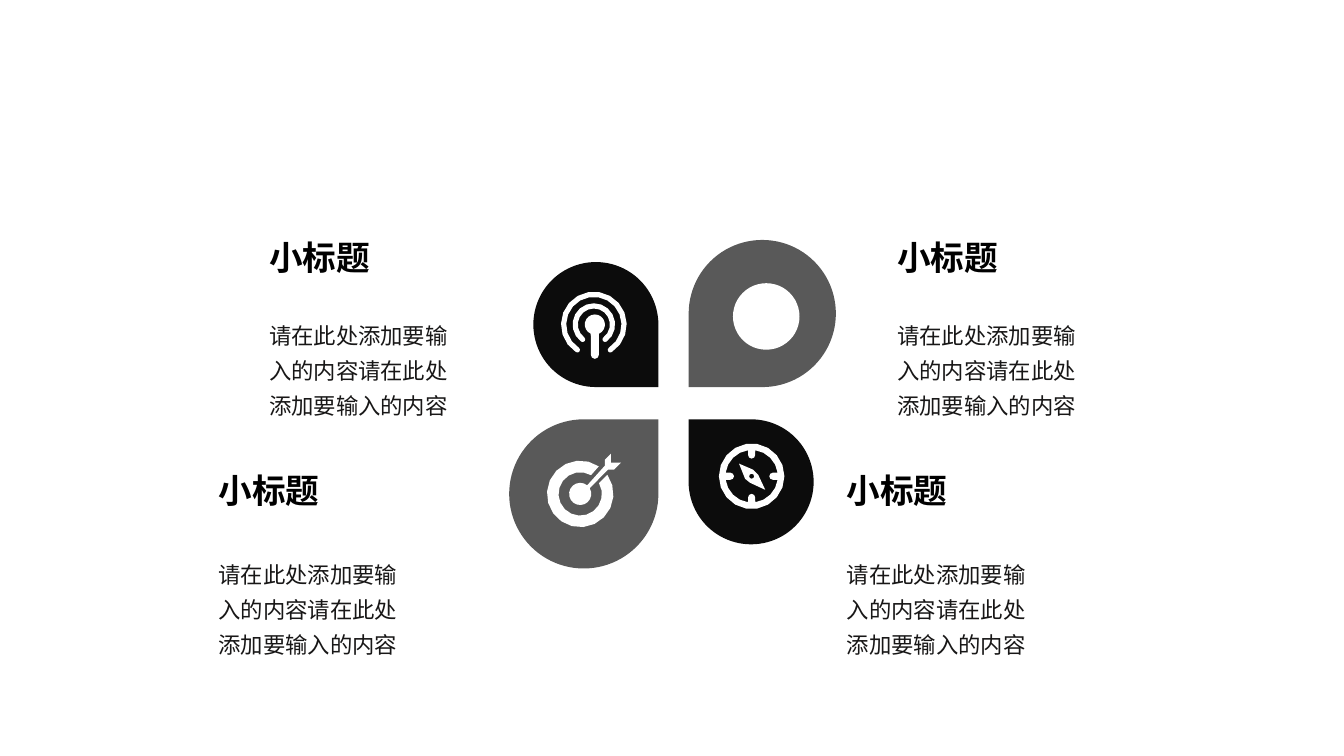
"""Builds a four-petal slide with an icon in each petal and four captions."""
from math import cos, radians, sin

from lxml import etree
from pptx import Presentation
from pptx.dml.color import RGBColor
from pptx.enum.shapes import MSO_SHAPE
from pptx.enum.text import MSO_AUTO_SIZE, PP_ALIGN
from pptx.oxml.ns import qn
from pptx.util import Inches, Pt

TEARDROP, OVAL = MSO_SHAPE.TEAR, MSO_SHAPE.OVAL
GROW, JUSTIFY = MSO_AUTO_SIZE.SHAPE_TO_FIT_TEXT, PP_ALIGN.JUSTIFY
COLORS = {"black": "0C0C0C", "gray": "595959", "white": "FFFFFF",
          "title": "000000", "body": "181717"}
FONT = "Noto Sans CJK SC"
LEFT, RIGHT, TOP, BOTTOM = 6.53, 6.83, 3.84, 4.16


def arc(cx, cy, r, start=0, end=360):
    step = 20 if r >= 0.1 else 45
    n = round(abs(end - start) / step)
    angles = [radians(start + (end - start) * i / n) for i in range(n + 1)]
    return [(cx + r * cos(a), cy + r * sin(a)) for a in angles]


def wave(cx, cy, r, start, end):
    half = 0.026
    tips = [(cx + r * cos(radians(a)), cy + r * sin(radians(a))) for a in (start, end)]
    return (arc(cx, cy, r + half, start, end) + arc(*tips[1], half, end, end + 180)
            + arc(cx, cy, r - half, end, start) + arc(*tips[0], half, start + 180, start + 360))


def compass():
    cx, cy = 7.455, 4.725
    dial = []
    for a in range(0, 360, 90):
        tick = radians(a + 90)
        dial += arc(cx, cy, 0.26, a + 8, a + 82)
        dial += arc(cx + 0.21 * cos(tick), cy + 0.21 * sin(tick), 0.035, a, a - 180)
    needle = [(7.33, 4.6), (7.47, 4.66), (7.52, 4.71), (7.59, 4.86), (7.44, 4.79), (7.39, 4.75)]
    return [arc(cx, cy, 0.325), dial, needle, arc(cx, cy, 0.025)]


def antenna():
    cx, cy = 5.89, 3.22
    mast = arc(cx + 0.01, cy, 0.1, 114, 426) + arc(cx + 0.01, 3.52, 0.04, 0, 180)
    return [wave(cx, cy, 0.3, 123, 417), wave(cx, cy, 0.185, 127, 413), mast]


def target():
    cx, cy = 5.755, 4.9
    ring = arc(cx, cy, 0.33, -35, 304) + arc(cx, cy, 0.215, 300, -30)
    dart = arc(cx, cy, 0.11, -31, 309) + [(6, 4.62), (6, 4.56), (6.06, 4.5), (6.06, 4.59),
                                          (6.16, 4.59), (6.09, 4.66), (6.03, 4.66)]
    return [ring, dart]


class Deck:
    """Holds the presentation, its slide and the shared style."""

    def __init__(self):
        self.prs = Presentation()
        self.prs.slide_width, self.prs.slide_height = Inches(13.33), Inches(7.5)
        self.s = self.prs.slides.add_slide(self.prs.slide_layouts[6])

    def paint(self, sp, color):
        sp.shadow.inherit = False
        sp.fill.solid()
        sp.fill.fore_color.rgb = RGBColor.from_string(COLORS[color])
        sp.line.fill.background()

    def petal(self, is_right, is_lower, size, color, rotation):
        group = self.s.shapes.add_group_shape()
        x = RIGHT if is_right else LEFT - size
        y = BOTTOM if is_lower else TOP - size
        sp = group.shapes.add_shape(TEARDROP, Inches(x), Inches(y), Inches(size), Inches(size))
        sp.rotation = rotation
        self.paint(sp, color)
        return group

    def disc(self, group, x, y, size):
        sp = group.shapes.add_shape(OVAL, Inches(x), Inches(y), Inches(size), Inches(size))
        self.paint(sp, "white")

    def icon(self, group, contours):
        builder = None
        for contour in contours:
            points = [(Inches(x), Inches(y)) for x, y in contour]
            if builder is None:
                builder = group.shapes.build_freeform(*points[0])
            else:
                builder.move_to(*points[0])
            builder.add_line_segments(points[1:], close=True)
        self.paint(builder.convert_to_shape(), "white")

    def text(self, x, y, height, text, size, color, bold=False, align=None, spacing=None):
        sp = self.s.shapes.add_textbox(Inches(x), Inches(y), Inches(2.12), Inches(height))
        tf = sp.text_frame
        tf.word_wrap, tf.auto_size = True, GROW
        tf.text = text
        p = tf.paragraphs[0]
        p.alignment, p.line_spacing = align, spacing
        r = p.runs[0]
        r.font.size, r.font.name = Pt(size), FONT
        if bold:
            r.font.bold = True
        r.font.color.rgb = RGBColor.from_string(COLORS[color])
        etree.SubElement(r._r.get_or_add_rPr(), qn("a:ea"), typeface=FONT)

    def caption(self, x, title_y, body_y):
        self.text(x, body_y, 1.15, "请在此处添加要输入的内容请在此处添加要输入的内容",
                  16, "body", spacing=1.3)
        self.text(x, title_y, 0.5, "小标题", 24, "title", bold=True, align=JUSTIFY)


def main():
    deck = Deck()
    deck.icon(deck.petal(True, True, 1.24, "black", 270), compass())
    deck.disc(deck.petal(True, False, 1.46, "gray", 180), 7.27, 2.81, 0.66)
    deck.icon(deck.petal(False, False, 1.24, "black", 90), antenna())
    deck.icon(deck.petal(False, True, 1.48, "gray", 0), target())
    for x, title_y, body_y in ((2.57, 2.3, 3.07), (2.07, 4.61, 5.44)):
        for column in range(2):
            deck.caption(x + 6.23 * column, title_y, body_y)
    deck.prs.save("out.pptx")


if __name__ == "__main__":
    main()
